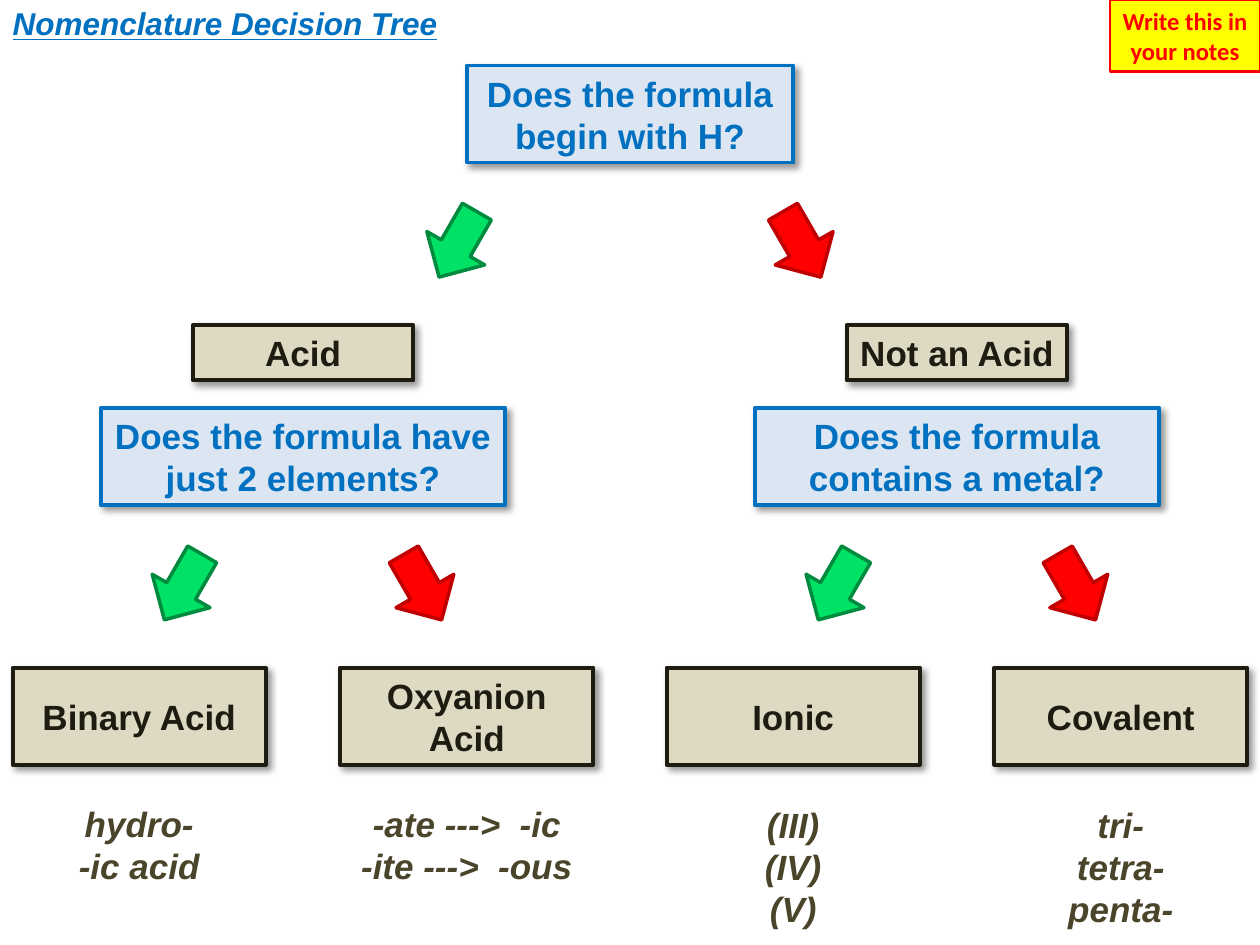
from lxml import etree
from pptx import Presentation
from pptx.dml.color import RGBColor
from pptx.enum.shapes import MSO_SHAPE as SHAPE
from pptx.enum.text import MSO_ANCHOR as ANCHOR, MSO_AUTO_SIZE as AUTO, PP_ALIGN as ALIGN
from pptx.oxml.ns import nsdecls, qn
from pptx.util import Inches, Pt

# Content
TITLE = "Nomenclature Decision Tree"
NOTE = "Write this in your notes"
ROOT = "Does the formula begin with H?"
BRANCHES = [
    ("Acid", "Does the formula have\njust 2 elements?", [
        ("Binary Acid", "hydro-\n-ic acid"),
        ("Oxyanion\nAcid", "-ate --->  -ic\n-ite --->  -ous")]),
    ("Not an Acid", "Does the formula\ncontains a metal?", [
        ("Ionic", "(III)\n(IV)\n(V)"),
        ("Covalent", "tri-\ntetra-\npenta-")]),
]

COLORS = {
    "blue": "0070C0", "pale_blue": "DCE6F2", "tan": "DDD9C3", "dark": "1E1C11",
    "olive": "4A452A", "white": "FFFFFF", "green": "00E266", "dark_green": "008A3E",
    "red": "FF0000", "dark_red": "C00000", "yellow": "FFFF00",
}
STYLES = {  # fill, line, line width, text colour, shadow, font
    "question": ("pale_blue", "blue", 2.25, "blue", True,
                 {"name": "Arial", "size": Pt(20), "bold": True}),
    "answer": ("tan", "dark", 2.25, "dark", True,
               {"name": "Arial", "size": Pt(20), "bold": True}),
    "example": ("white", None, 0, "olive", False,
                {"name": "Arial", "size": Pt(20), "bold": True, "italic": True}),
    "note": ("yellow", "red", 1.5, "red", False,
             {"name": "Calibri", "size": Pt(14), "bold": True}),
}
TITLE_FONT = {"name": "Arial", "size": Pt(18), "bold": True, "italic": True, "underline": True}

# Layout, in inches
CENTER, BRANCH_DX, LEAF_DX = 5, 2.595, 1.3
ROOT_Y, BRANCH_Y, QUESTION_Y, LEAF_Y, EXAMPLE_Y = 0.52, 2.58, 3.24, 5.3, 6.32
BOX_H, ARROW_DY = 0.77, 1.12
SIDES = (-1, 1)


def rgb(name):
    return RGBColor.from_string(COLORS[name])


def write(shape, text, font, color, align):
    tf = shape.text_frame
    tf.text = text
    tf.vertical_anchor = ANCHOR.MIDDLE
    for p in tf.paragraphs:
        p.alignment = align
        for r in p.runs:
            for key, value in font.items():
                setattr(r.font, key, value)
            r.font.color.rgb = rgb(color)


def paint(shape, fill, line, width):
    shape.shadow.inherit = False
    shape.fill.solid()
    shape.fill.fore_color.rgb = rgb(fill)
    if line:
        shape.line.color.rgb = rgb(line)
        shape.line.width = Pt(width)
    else:
        shape.line.fill.background()


def add_shadow(shape):
    effects = shape._element.spPr.find(qn("a:effectLst"))
    effects.append(etree.fromstring(
        f'<a:outerShdw {nsdecls("a")} blurRad="{Pt(4)}" dist="{Pt(3)}" dir="2700000" '
        'algn="tl" rotWithShape="0"><a:srgbClr val="000000"><a:alpha val="40000"/>'
        '</a:srgbClr></a:outerShdw>'))


def add_box(s, style, text, cx, y, w, h=BOX_H):
    fill, line, width, color, shadow, font = STYLES[style]
    sp = s.shapes.add_shape(SHAPE.RECTANGLE, Inches(cx - w / 2), Inches(y), Inches(w), Inches(h))
    paint(sp, fill, line, width)
    if shadow:
        add_shadow(sp)
    write(sp, text, font, color, ALIGN.CENTER)
    sp.text_frame.word_wrap = "\n" not in text and style in ("question", "note")
    return sp


def add_arrows(s, cx, dx, question_y):
    """Green yes arrow to the left, red no arrow to the right."""
    for side, fill, line in zip(SIDES, ("green", "red"), ("dark_green", "dark_red")):
        sp = s.shapes.add_shape(SHAPE.DOWN_ARROW, Inches(cx + side * dx - 0.265),
                                Inches(question_y + ARROW_DY), Inches(0.53), Inches(0.6))
        sp.rotation = -30 * side % 360
        paint(sp, fill, line, 2)


def main():
    prs = Presentation()
    prs.slide_width, prs.slide_height = Inches(10), Inches(7.5)
    s = prs.slides.add_slide(prs.slide_layouts[5])

    # Title
    title = s.shapes.title
    title.left, title.top, title.width, title.height = map(Inches, (0, 0, 4.09, 0.37))
    write(title, TITLE, TITLE_FONT, "blue", ALIGN.LEFT)
    title.text_frame.auto_size = AUTO.NONE

    # Root question
    add_box(s, "question", ROOT, CENTER, ROOT_Y, 2.59)
    add_arrows(s, CENTER, 1.365, ROOT_Y)

    # Branches and their leaves
    for side, (answer, question, leaves) in zip(SIDES, BRANCHES):
        cx = CENTER + side * BRANCH_DX
        add_box(s, "answer", answer, cx, BRANCH_Y, 1.75, 0.44)
        add_box(s, "question", question, cx, QUESTION_Y, 3.21)
        add_arrows(s, cx, 0.95, QUESTION_Y)
        for leaf_side, (name, example) in zip(SIDES, leaves):
            leaf_x = cx + leaf_side * LEAF_DX
            add_box(s, "answer", name, leaf_x, LEAF_Y, 2.01)
            lines = example.count("\n") + 1
            add_box(s, "example", example, leaf_x, EXAMPLE_Y, 2.01, 0.09 + 0.34 * lines)

    # Corner note
    note = add_box(s, "note", NOTE, 9.405, 0, 1.19, 0.57)
    note.text_frame.vertical_anchor = ANCHOR.TOP
    note.text_frame.auto_size = AUTO.SHAPE_TO_FIT_TEXT

    prs.save("out.pptx")


if __name__ == "__main__":
    main()
